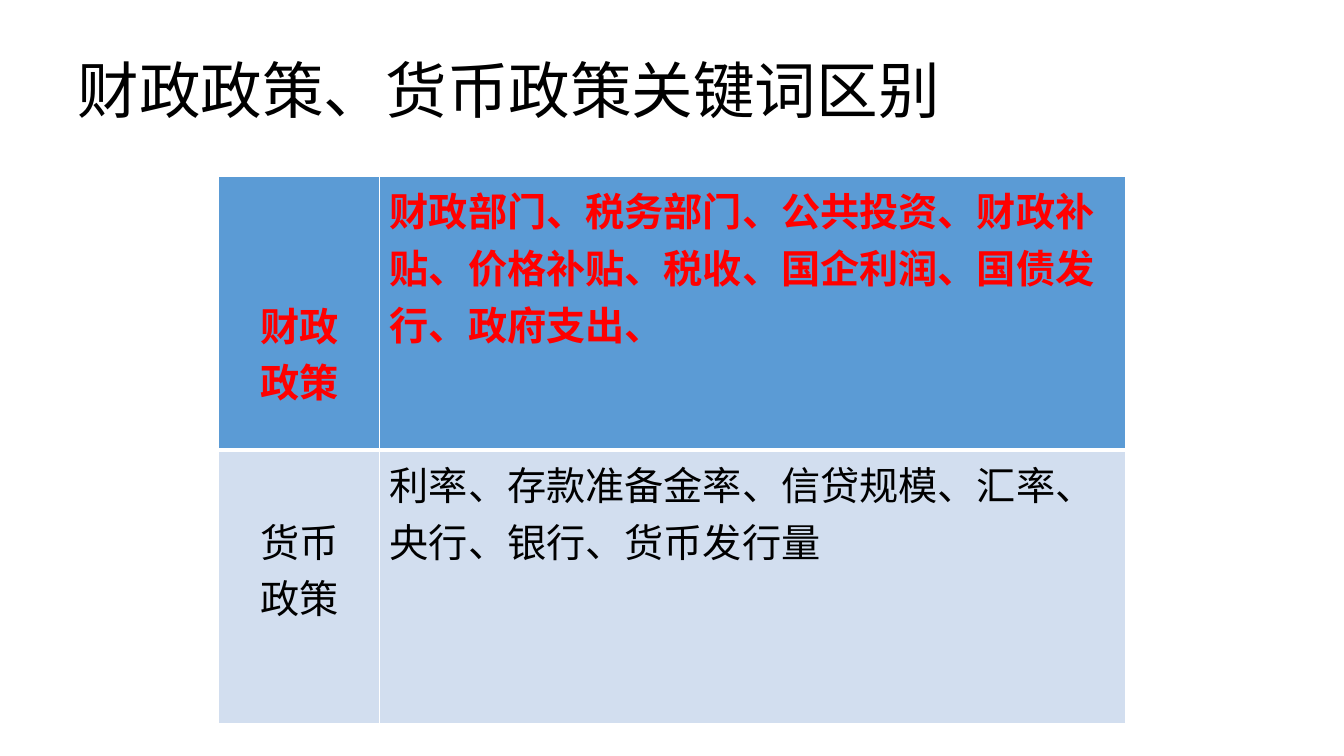
from lxml import etree
from pptx import Presentation
from pptx.dml.color import RGBColor
from pptx.enum.text import MSO_ANCHOR, PP_ALIGN
from pptx.oxml.ns import qn
from pptx.util import Cm, Pt

MIDDLE = MSO_ANCHOR.MIDDLE
TOP = MSO_ANCHOR.TOP
LEFT = PP_ALIGN.LEFT
CENTER = PP_ALIGN.CENTER
FONT = "Calibri"
COLORS = {"ink": "000000", "red": "FF0000", "head": "5B9BD5", "body": "D2DEEF", "rule": "FFFFFF"}
ROWS = [
    (["财政", "政策"],
     "财政部门、税务部门、公共投资、财政补贴、价格补贴、税收、国企利润、国债发行、政府支出、",
     "head", "red", True, 3),
    (["货币", "政策"],
     "利率、存款准备金率、信贷规模、汇率、央行、银行、货币发行量",
     "body", "ink", False, 1.56),
]


def rgb(name):
    """Return the named colour."""
    return RGBColor.from_string(COLORS[name])


def write(para, text, size, color, bold, align):
    """Add one formatted run to a paragraph."""
    para.alignment = align
    run = para.add_run()
    run.text = text
    font = run.font
    font.name, font.size, font.bold = FONT, Pt(size), bold
    font.color.rgb = rgb(color)


def edge(cell, widths):
    """Draw the cell borders, with widths in points by side."""
    props = cell._tc.get_or_add_tcPr()
    for spot, (side, width) in enumerate(widths.items()):
        line = etree.Element(qn(f"a:ln{side}"), w=str(Pt(width)))
        fill = etree.SubElement(line, qn("a:solidFill"))
        etree.SubElement(fill, qn("a:srgbClr"), val=COLORS["rule"])
        props.insert(spot, line)


def fill_cell(cell, lines, align, shade, color, bold):
    """Shade a cell and write its lines."""
    cell.fill.solid()
    cell.fill.fore_color.rgb = rgb(shade)
    cell.vertical_anchor = TOP
    frame = cell.text_frame
    for spot, text in enumerate(lines):
        para = frame.add_paragraph() if spot else frame.paragraphs[0]
        write(para, text, 28, color, bold, align)


def add_title(slide, left, top, width, height):
    """Place and write the title."""
    title = slide.shapes.title
    title.left, title.top, title.width, title.height = left, top, width, height
    frame = title.text_frame
    frame.word_wrap = True
    frame.vertical_anchor = MIDDLE
    para = frame.paragraphs[0]
    para.line_spacing = 0.9
    write(para, "财政政策、货币政策关键词区别", 44, "ink", False, LEFT)


def add_terms(slide, left, top, width, height):
    """Place the table of policy keywords."""
    table = slide.shapes.add_table(len(ROWS), 2, left, top, width, height).table
    name_width = Cm(4.06)
    table.columns[0].width = name_width
    table.columns[1].width = width - name_width
    for spot, (name, terms, shade, color, bold, inset) in enumerate(ROWS):
        table.rows[spot].height = height // len(ROWS)
        label, words = table.cell(spot, 0), table.cell(spot, 1)
        fill_cell(label, name, CENTER, shade, color, bold)
        fill_cell(words, [terms], LEFT, shade, color, bold)
        label.margin_top = Cm(inset)
        for cell in (label, words):
            edge(cell, {"L": 1, "R": 1, "T": 3 if spot else 1, "B": 1 if spot else 3})


def main():
    """Build and save the slide."""
    deck = Presentation()
    deck.slide_width, deck.slide_height = Cm(33.87), Cm(19.05)
    slide = deck.slides.add_slide(deck.slide_layouts[5])
    add_title(slide, Cm(1.7), Cm(0.76), Cm(30.48), Cm(3.18))
    add_terms(slide, Cm(5.51), Cm(4.45), Cm(22.86), Cm(13.78))
    deck.save("out.pptx")


if __name__ == "__main__":
    main()
